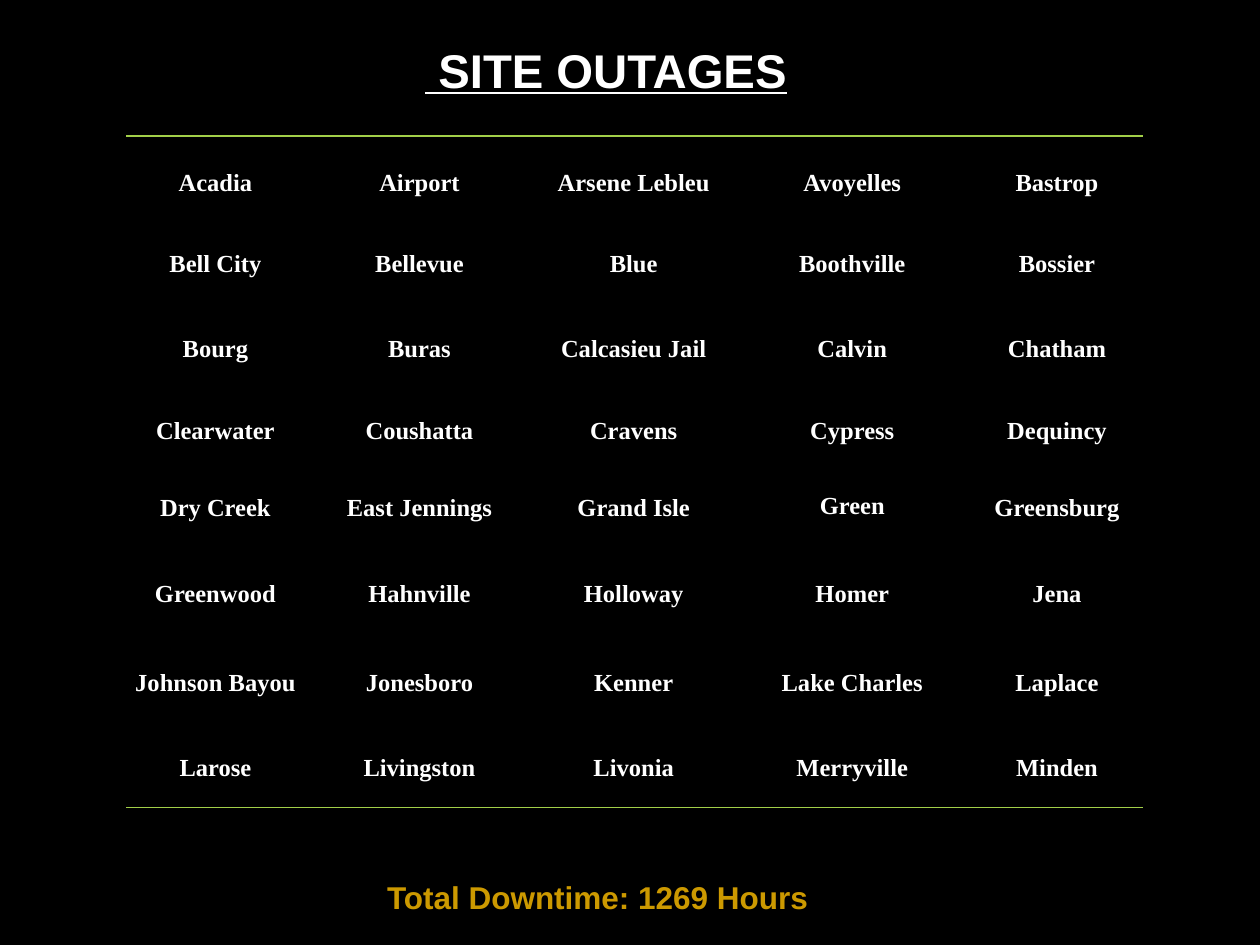
from pptx import Presentation
from pptx.dml.color import RGBColor
from pptx.enum.text import MSO_ANCHOR, MSO_AUTO_SIZE, PP_ALIGN
from pptx.oxml import parse_xml
from pptx.oxml.ns import nsdecls
from pptx.util import Inches, Pt

THEME = {
    "background": RGBColor.from_string("000000"),
    "rule": "A2CF49",
    "title": {"name": "Arial", "size": Pt(27), "bold": True, "underline": True,
              "color": "FFFFFF"},
    "total": {"name": "Arial", "size": Pt(18), "bold": True, "color": "CC9900"},
    "site": {"name": "Times New Roman", "size": Pt(14), "bold": True,
             "color": "FFFFFF"},
}
SITES = [
    ["Acadia", "Airport", "Arsene Lebleu", "Avoyelles", "Bastrop"],
    ["Bell City", "Bellevue", "Blue", "Boothville", "Bossier"],
    ["Bourg", "Buras", "Calcasieu Jail", "Calvin", "Chatham"],
    ["Clearwater", "Coushatta", "Cravens", "Cypress", "Dequincy"],
    ["Dry Creek", "East Jennings", "Grand Isle", "Green", "Greensburg"],
    ["Greenwood", "Hahnville", "Holloway", "Homer", "Jena"],
    ["Johnson Bayou", "Jonesboro", "Kenner", "Lake Charles", "Laplace"],
    ["Larose", "Livingston", "Livonia", "Merryville", "Minden"],
]
COLUMN_WIDTHS = [1.42, 1.82, 1.58, 1.89, 1.36]
ROW_HEIGHTS = [0.71, 0.59, 0.75, 0.56, 0.65, 0.72, 0.69, 0.66]
NO_STYLE_NO_GRID = "{2D5ABB26-0587-4C30-8999-92F81FD0307C}"


def write(text_frame, text, style):
    """Put one centred paragraph in the frame, in a theme style."""
    paragraph = text_frame.paragraphs[0]
    paragraph.alignment = PP_ALIGN.CENTER
    run = paragraph.add_run()
    run.text = text
    for name, value in THEME[style].items():
        if name == "color":
            run.font.color.rgb = RGBColor.from_string(value)
        else:
            setattr(run.font, name, value)
    return paragraph


def set_borders(cell, ruled_sides):
    """Rule the given sides (L, R, T, B) and clear the others."""
    for position, side in enumerate("LRTB"):
        if side in ruled_sides:
            paint = f'<a:solidFill><a:srgbClr val="{THEME["rule"]}"/></a:solidFill>'
        else:
            paint = "<a:noFill/>"
        border = parse_xml(
            f'<a:ln{side} {nsdecls("a")} w="{Pt(1)}">{paint}</a:ln{side}>')
        cell._tc.get_or_add_tcPr().insert(position, border)


presentation = Presentation()
presentation.slide_width = Inches(10)
presentation.slide_height = Inches(7.5)
slide = presentation.slides.add_slide(presentation.slide_layouts[5])
slide.background.fill.solid()
slide.background.fill.fore_color.rgb = THEME["background"]

title = slide.shapes.title
title.left, title.top = Inches(1.17), Inches(0.26)
title.width, title.height = Inches(7.28), Inches(0.58)
title.text_frame.vertical_anchor = MSO_ANCHOR.MIDDLE
write(title.text_frame, " SITE OUTAGES", "title")

total = slide.shapes.add_textbox(Inches(2.25), Inches(6.92), Inches(5.13), Inches(0.4))
total.text_frame.word_wrap = True
total.text_frame.auto_size = MSO_AUTO_SIZE.SHAPE_TO_FIT_TEXT
total.text_frame.margin_right = Inches(0.24)
write(total.text_frame, "Total Downtime: 1269 Hours", "total")

table_frame = slide.shapes.add_table(
    len(ROW_HEIGHTS), len(COLUMN_WIDTHS), Inches(1), Inches(1.08),
    Inches(sum(COLUMN_WIDTHS)), Inches(sum(ROW_HEIGHTS)))
table = table_frame.table
table.first_row = table.horz_banding = False
table._tbl.tblPr.find("{*}tableStyleId").text = NO_STYLE_NO_GRID
for column, width in zip(table.columns, COLUMN_WIDTHS):
    column.width = Inches(width)
for row, height in zip(table.rows, ROW_HEIGHTS):
    row.height = Inches(height)

cell_format = {"margin_left": 0, "margin_right": 0, "margin_top": 0,
               "margin_bottom": 0, "vertical_anchor": MSO_ANCHOR.MIDDLE}
ruled_rows = {0: "T", len(SITES) - 1: "B"}
for row_index, row_sites in enumerate(SITES):
    for column_index, site in enumerate(row_sites):
        cell = table.cell(row_index, column_index)
        for name, value in cell_format.items():
            setattr(cell, name, value)
        cell.fill.background()
        set_borders(cell, ruled_rows.get(row_index, ""))
        paragraph = write(cell.text_frame, site, "site")
        if site != "Green":
            paragraph.line_spacing = 1.15

presentation.save("out.pptx")
